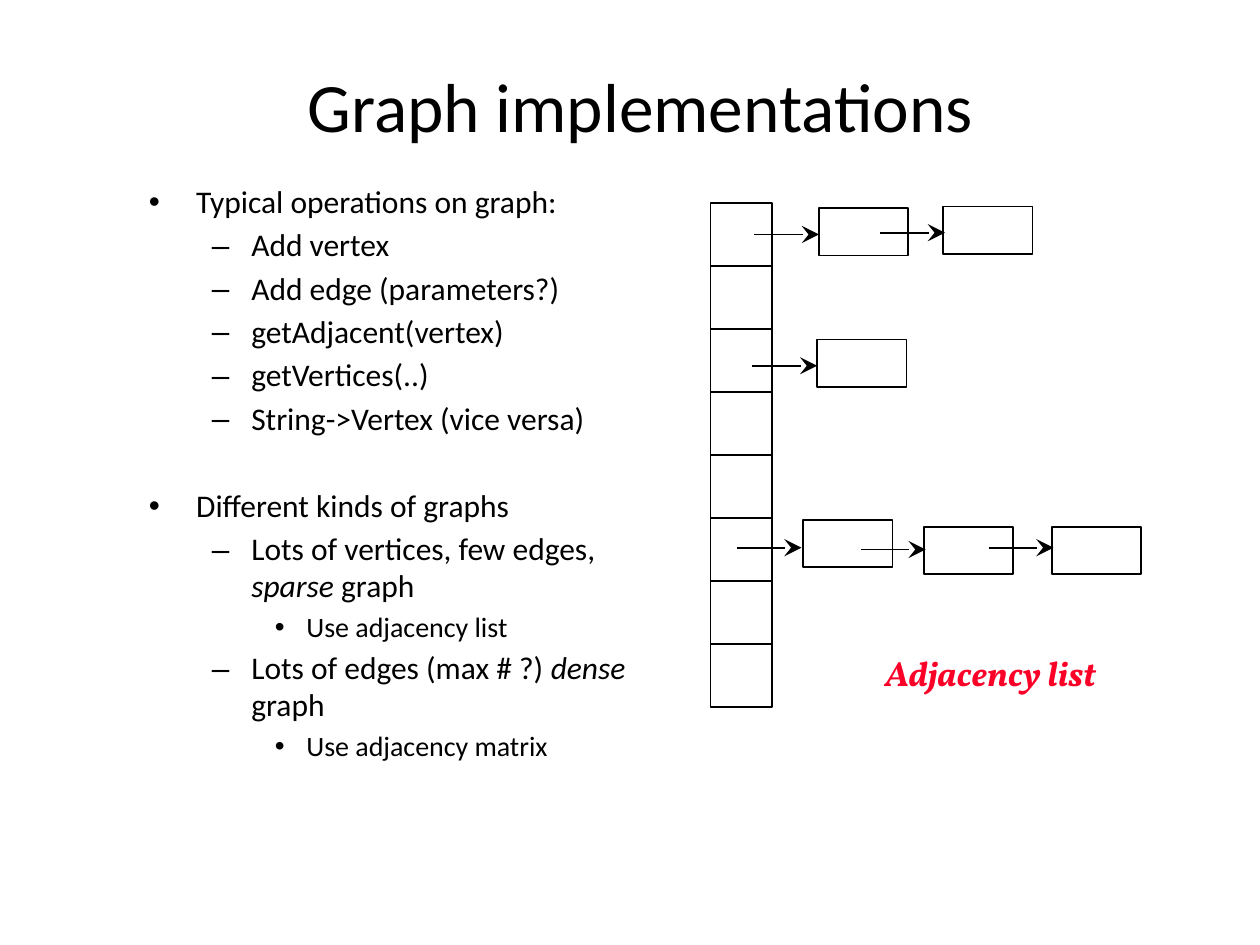
from lxml.etree import SubElement
from pptx import Presentation
from pptx.dml.color import RGBColor
from pptx.enum.shapes import MSO_CONNECTOR, MSO_SHAPE
from pptx.enum.text import MSO_ANCHOR, MSO_AUTO_SIZE, PP_ALIGN
from pptx.oxml.ns import qn
from pptx.util import Pt

BLACK, RED = "000000", "FC0128"


def add_span(para, text, color=BLACK, **font_format):
    span = para.add_run()
    span.text = text
    span.font.color.rgb = RGBColor.from_string(color)
    for name, value in font_format.items():
        setattr(span.font, name, value)


def add_cell(left, top, width, height):
    """Add an unfilled rectangle with a thin black outline."""
    cell = page.shapes.add_shape(MSO_SHAPE.RECTANGLE, Pt(left), Pt(top), Pt(width), Pt(height))
    cell.shadow.inherit = False
    cell.fill.background()
    cell.line.color.rgb = RGBColor.from_string(BLACK)
    cell.line.width = Pt(1)


deck = Presentation()
deck.slide_width, deck.slide_height = Pt(720), Pt(540)
page = deck.slides.add_slide(deck.slide_layouts[5])

# Title
title = page.shapes.title
title.left, title.top, title.width, title.height = Pt(60), Pt(36), Pt(612), Pt(48)
title.text_frame.auto_size = MSO_AUTO_SIZE.NONE
title.text_frame.vertical_anchor = MSO_ANCHOR.MIDDLE
para = title.text_frame.paragraphs[0]
para.alignment = PP_ALIGN.CENTER
add_span(para, "Graph implementations", name="Calibri", size=Pt(39.6))

# Bullet list: left margin, hanging indent, bullet and text size of each level
levels = [(27, 27, "•", 18), (58.5, 22.5, "–", 18), (90, 18, "•", 16)]
group_gap = 29.2
# Level and text pieces; every second piece is italic
items = [
    (0, ["Typical operations on graph:"]),
    (1, ["Add vertex"]),
    (1, ["Add edge (parameters?)"]),
    (1, ["getAdjacent(vertex)"]),
    (1, ["getVertices(..)"]),
    (1, ["String->Vertex (vice versa)"]),
    (0, ["Different kinds of graphs"]),
    (1, ["Lots of vertices, few edges, ", "sparse", " graph"]),
    (2, ["Use adjacency list"]),
    (1, ["Lots of edges (max # ?) ", "dense", " graph"]),
    (2, ["Use adjacency matrix"]),
]
body = page.shapes.add_textbox(Pt(78), Pt(102), Pt(300), Pt(354)).text_frame
body.word_wrap = True
for index, (level, pieces) in enumerate(items):
    margin, hanging, bullet, size = levels[level]
    para = body.add_paragraph() if index else body.paragraphs[0]
    para.level = level
    para.line_spacing = 0.96
    para.space_before = Pt(group_gap if index and level == 0 else 4)
    properties = para._p.get_or_add_pPr()
    properties.set("marL", str(Pt(margin)))
    properties.set("indent", str(-Pt(hanging)))
    SubElement(properties, qn("a:buFont"), typeface="Arial")
    SubElement(properties, qn("a:buChar"), char=bullet)
    for position, piece in enumerate(pieces):
        add_span(para, piece, name="Calibri", size=Pt(size), italic=position % 2 == 1)

# Vertex array
for row in range(8):
    add_cell(406, 116 + 36 * row, 35.3, 36)

# Linked nodes: arrow start (x, y), then node corner (left, top)
links = [
    (431, 134, 468, 119),
    (503, 133, 539, 118),
    (430, 209, 467, 194),
    (421, 313, 459, 297),
    (492, 314, 528, 301),
    (565, 313, 601, 301),
]
for start, height, left, top in links:
    add_cell(left, top, 51, 27)
    arrow = page.shapes.add_connector(
        MSO_CONNECTOR.STRAIGHT, Pt(start), Pt(height), Pt(start + 37), Pt(height))
    arrow.line.color.rgb = RGBColor.from_string(BLACK)
    arrow.line.width = Pt(1)
    SubElement(arrow.line._get_or_add_ln(), qn("a:tailEnd"), type="stealth", w="lg", len="lg")
    SubElement(arrow._element.spPr, qn("a:effectLst"))

# Caption
caption = page.shapes.add_textbox(Pt(432), Pt(369), Pt(268), Pt(31)).text_frame
caption.word_wrap = True
para = caption.paragraphs[0]
para.alignment = PP_ALIGN.CENTER
add_span(para, "Adjacency list", RED, name="Vollkorn", size=Pt(20), bold=True, italic=True)

deck.save("out.pptx")
